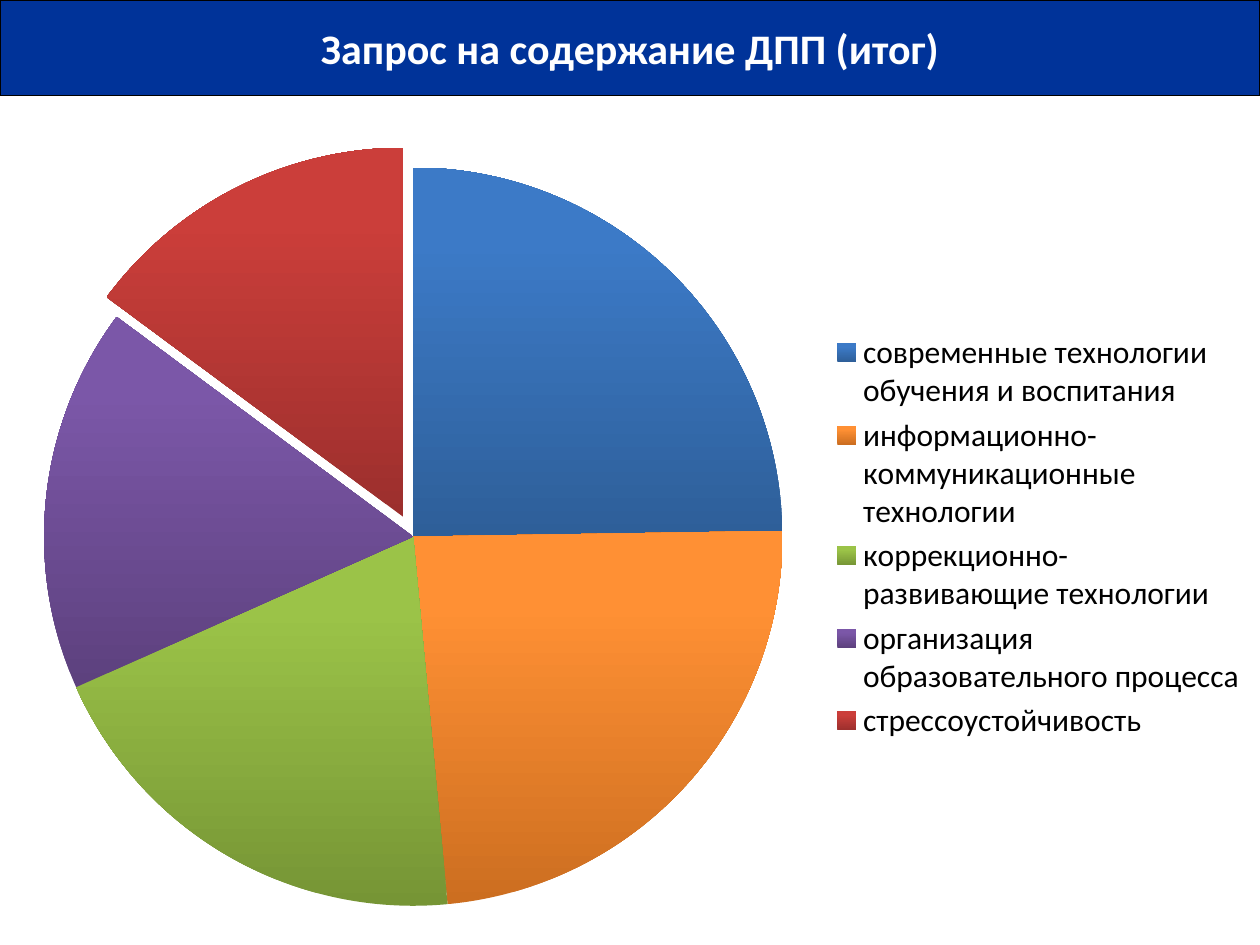
"""Build a slide with a title banner and a pie chart of requested course content."""
from dataclasses import dataclass

from pptx import Presentation
from pptx import util as u
from pptx.chart.data import CategoryChartData
from pptx.dml.color import RGBColor
from pptx.enum import chart as charts, text
from pptx.oxml import parse_xml
from pptx.oxml.ns import nsdecls, qn


@dataclass(frozen=True)
class Theme:
    """Colours, font and type sizes of the slide."""
    font: str = "Calibri"
    banner: str = "003399"
    light: str = "FFFFFF"
    dark: str = "000000"
    title_size: int = 24
    legend_size: int = 18


@dataclass(frozen=True)
class Slice:
    """One pie slice with its gradient from bottom to top."""
    label: str
    value: int
    bottom: str
    top: str
    explosion: int = 0


@dataclass(frozen=True)
class Area:
    """A rectangle in shares of its container."""
    left: float
    top: float
    width: float
    height: float


THEME = Theme()
BANNER = Area(0, 0, 1, 0.76 / 7.5)
CHART = Area(0, 1.02 / 7.5, 1, 6.48 / 7.5)
PIE = Area(0.35 / 10, 0.31 / 6.48, 5.86 / 10, 5.86 / 6.48)
SLICES = (
    Slice("современные технологии обучения и воспитания", 25, "2E5F99", "3C7AC7"),
    Slice("информационно-коммуникационные технологии", 24, "CC6E20", "FF9034"),
    Slice("коррекционно-развивающие технологии", 20, "769535", "9BC348"),
    Slice("организация образовательного процесса", 17, "5D417E", "7B57A8"),
    Slice("стрессоустойчивость", 15, "9C2F2D", "CB3E3A", explosion=6),
)


def frame(deck, area: Area) -> tuple:
    """Turn shares of the slide into lengths."""
    width, height = deck.slide_width, deck.slide_height
    return tuple(u.Emu(round(length)) for length in (
        area.left * width, area.top * height, area.width * width, area.height * height))


def format_font(font, *, size: int, color: str, bold: bool = False) -> None:
    """Apply the theme font with the given format."""
    font.name, font.size, font.bold = THEME.font, u.Pt(size), bold
    font.color.rgb = RGBColor.from_string(color)


def write(box, words: str, *, size: int, color: str, bold: bool = False) -> None:
    """Write one centred line into a box."""
    body = box.text_frame
    body.word_wrap = False
    body.auto_size = text.MSO_AUTO_SIZE.NONE
    body.vertical_anchor = text.MSO_ANCHOR.MIDDLE
    para = body.paragraphs[0]
    para.alignment = text.PP_ALIGN.CENTER
    span = para.add_run()
    span.text = words
    format_font(span.font, size=size, color=color, bold=bold)


def draw_banner(deck, page, words: str) -> None:
    """Turn the title placeholder into the banner."""
    box = page.shapes.title
    box.left, box.top, box.width, box.height = frame(deck, BANNER)
    box.fill.solid()
    box.fill.fore_color.rgb = RGBColor.from_string(THEME.banner)
    box.line.color.rgb = RGBColor.from_string(THEME.dark)
    box.line.width = u.Pt(0.75)
    write(box, words, size=THEME.title_size, color=THEME.light, bold=True)


def place_plot(chart, area: Area) -> None:
    """Fix the inner plot area of a chart."""
    plot_area = next(chart.element.iter(qn("c:plotArea")))
    for old in plot_area.findall(qn("c:layout")):
        plot_area.remove(old)
    plot_area.insert(0, parse_xml(
        f'<c:layout {nsdecls("c")}><c:manualLayout><c:layoutTarget val="inner"/>'
        '<c:xMode val="edge"/><c:yMode val="edge"/>'
        f'<c:x val="{area.left}"/><c:y val="{area.top}"/>'
        f'<c:w val="{area.width}"/><c:h val="{area.height}"/>'
        '</c:manualLayout></c:layout>'))


def paint_slice(point, piece: Slice) -> None:
    """Give a slice its gradient and its distance from the centre."""
    fill = point.format.fill
    fill.gradient()
    fill.gradient_angle = 90
    for stop, color, position in zip(
            fill.gradient_stops, (piece.bottom, piece.top), (0, 0.8)):
        stop.color.rgb = RGBColor.from_string(color)
        stop.position = position
    point.format.line.fill.background()
    if piece.explosion:
        properties = fill._xPr
        properties.addprevious(parse_xml(
            f'<c:explosion {nsdecls("c")} val="{piece.explosion}"/>'))


def draw_pie(deck, page) -> None:
    """Add the pie chart with its legend."""
    data = CategoryChartData()
    data.categories = [piece.label for piece in SLICES]
    data.add_series("Series 1", [piece.value for piece in SLICES])
    chart = page.shapes.add_chart(
        charts.XL_CHART_TYPE.PIE, *frame(deck, CHART), data).chart
    chart.has_title = False
    format_font(chart.font, size=THEME.legend_size, color=THEME.dark)
    chart.has_legend = True
    chart.legend.position = charts.XL_LEGEND_POSITION.RIGHT
    chart.legend.include_in_layout = False
    plot = chart.plots[0]
    plot.vary_by_categories = True
    for index, piece in enumerate(SLICES):
        paint_slice(plot.series[0].points[index], piece)
    place_plot(chart, PIE)


def main() -> None:
    """Build and save the deck."""
    deck = Presentation()
    deck.slide_width, deck.slide_height = u.Inches(10), u.Inches(7.5)
    page = deck.slides.add_slide(deck.slide_layouts.get_by_name("Title Only"))
    draw_banner(deck, page, "Запрос на содержание ДПП (итог)")
    draw_pie(deck, page)
    deck.save("out.pptx")


if __name__ == "__main__":
    main()
